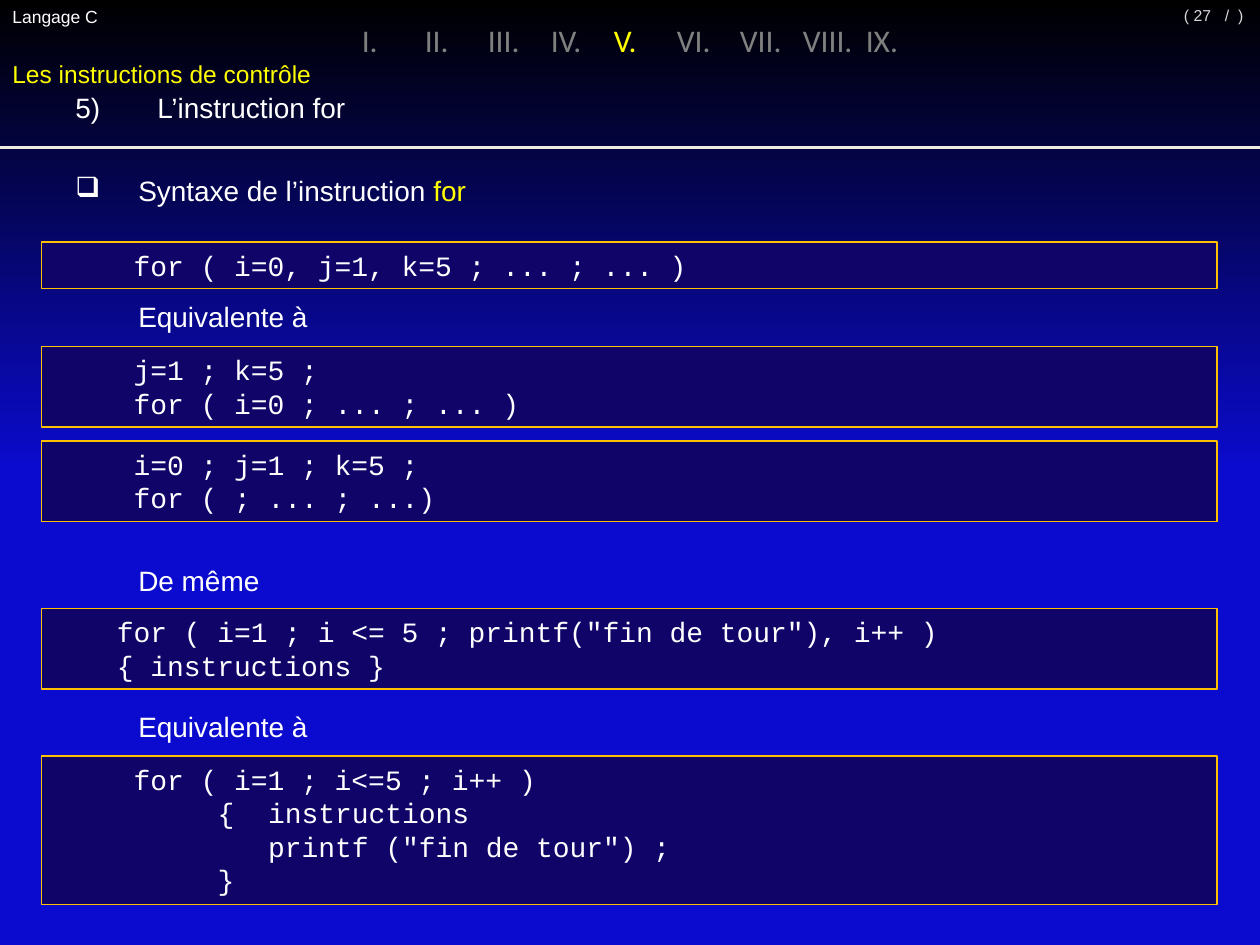
from lxml import etree
from pptx import Presentation
from pptx.dml.color import RGBColor
from pptx.enum import shapes, text
from pptx.oxml import ns
from pptx.util import Inches, Pt

BLACK = RGBColor(0x00, 0x00, 0x00)
BLUE = RGBColor(0x0B, 0x0B, 0xCF)
NAVY = RGBColor(0x10, 0x04, 0x68)
GOLD = RGBColor(0xFF, 0xC0, 0x00)
YELLOW = RGBColor(0xFF, 0xFF, 0x00)
WHITE = RGBColor(0xFF, 0xFF, 0xFF)
IVORY = RGBColor(0xEE, 0xEC, 0xE1)
SILVER = RGBColor(0xD9, 0xD9, 0xD9)
GRAY = RGBColor(0x80, 0x80, 0x80)

LINE_HEIGHT = 0.27
COLUMN = 0.1333
CODE_MARGIN = 0.5
BRACE_COLUMNS = 3

CHAPTERS = ["I.", "II.", "III.", "IV.", "V.", "VI.", "VII.", "VIII.", "IX."]
CURRENT_CHAPTER = "V."
LABELS = [(2.33, "Equivalente à"), (4.42, "De même"), (5.58, "Equivalente à")]
CODE_BLOCKS = [
    (1.92, [(1, "for ( i=0, j=1, k=5 ; ... ; ... )")]),
    (2.75, [(1, "j=1 ; k=5 ;"), (1, "for ( i=0 ; ... ; ... )")]),
    (3.5, [(1, "i=0 ; j=1 ; k=5 ;"), (1, "for ( ; ... ; ...)")]),
    (4.83, [(0, 'for ( i=1 ; i <= 5 ; printf("fin de tour"), i++ )'),
            (0, "{ instructions }")]),
    (6, [(1, "for ( i=1 ; i<=5 ; i++ )"), (6, "{\tinstructions"),
         (9, 'printf ("fin de tour") ;'), (6, "}")]),
]


def set_indent(para, margin, first=0):
    """Set the left margin and first-line indent of a paragraph."""
    properties = para._p.get_or_add_pPr()
    properties.set("marL", str(Inches(margin)))
    properties.set("indent", str(Inches(first)))


def set_font(para, size, color, name="Arial"):
    """Set the font shared by all runs of a paragraph."""
    para.font.size = Pt(size)
    para.font.name = name
    para.font.color.rgb = color


def add_label(page, box, wording, size, color, name="Arial",
              anchor=text.MSO_ANCHOR.TOP):
    """Add a one-paragraph text box and return its paragraph."""
    frame = page.shapes.add_textbox(*map(Inches, box)).text_frame
    frame.word_wrap = True
    frame.vertical_anchor = anchor
    para = frame.paragraphs[0]
    para.text = wording
    set_font(para, size, color, name)
    return para


def add_background(page):
    """Fill the page from black down to blue at mid-height."""
    fill = page.background.fill
    fill.gradient()
    fill.gradient_angle = 270
    for stop, (position, color) in zip(fill.gradient_stops, [(0, BLACK), (0.5, BLUE)]):
        stop.position = position
        stop.color.rgb = color


def add_chapters(page, box):
    """Add the chapter numerals with the current one highlighted."""
    para = add_label(page, box, "", 18, GRAY, "Calibri")
    para.alignment = text.PP_ALIGN.CENTER
    for index, chapter in enumerate(CHAPTERS):
        span = para.add_run()
        span.text = f"\t{chapter}" if index else chapter
        if chapter == CURRENT_CHAPTER:
            span.font.color.rgb = YELLOW


def add_header(page, box):
    """Add the course name, page number, chapters, titles and rule."""
    left, top, width, height = box
    add_label(page, (left, top, 0.92, 0.27), "Langage C", 10, WHITE)
    page_parts = [(9.48, 0.63, "/  )", text.PP_ALIGN.CENTER),
                  (9.17, 0.54, "( 27", text.PP_ALIGN.RIGHT)]
    for offset, part_width, wording, alignment in page_parts:
        para = add_label(page, (left + offset, top - 0.08, part_width, 0.4),
                         wording, 9, SILVER, anchor=text.MSO_ANCHOR.MIDDLE)
        para.alignment = alignment
    add_chapters(page, (left, top + 0.12, width, 0.4))
    title = add_label(page, (left, top + 0.42, width, 0.34),
                      "Les instructions de contrôle", 14, YELLOW)
    subtitle = add_label(page, (left, top + 0.67, 5.08, 0.37),
                         "5)\t L’instruction for", 16, WHITE)
    set_indent(subtitle, 1.09, -0.59)
    for para in (title, subtitle):
        para.space_before = para.space_after = Pt(6)
    ends = (left, top + height, left + width, top + height)
    rule = page.shapes.add_connector(shapes.MSO_CONNECTOR.STRAIGHT, *map(Inches, ends))
    rule.line.color.rgb = IVORY
    rule.line.width = Pt(2)
    etree.SubElement(rule._element.spPr, ns.qn("a:effectLst"))


def add_topic(page, box):
    """Add the bulleted topic with its keyword highlighted."""
    para = add_label(page, box, "Syntaxe de l’instruction ", 16, WHITE)
    para.space_before = para.space_after = Pt(6)
    keyword = para.add_run()
    keyword.text = "for"
    keyword.font.color.rgb = YELLOW
    set_indent(para, 1, -0.5)
    properties = para._p.get_or_add_pPr()
    bullet = etree.Element(ns.qn("a:buChar"), char="❑")
    properties.find(ns.qn("a:defRPr")).addprevious(bullet)


def add_code(page, box, lines):
    """Add a framed code block, each line indented by its columns."""
    block = page.shapes.add_shape(shapes.MSO_SHAPE.RECTANGLE, *map(Inches, box))
    block.shadow.inherit = False
    block.fill.solid()
    block.fill.fore_color.rgb = NAVY
    block.line.color.rgb = GOLD
    block.line.width = Pt(0.75)
    frame = block.text_frame
    frame.word_wrap = True
    frame.vertical_anchor = text.MSO_ANCHOR.TOP
    frame.text = "\n".join(wording for _, wording in lines)
    for para, (columns, wording) in zip(frame.paragraphs, lines):
        hanging = BRACE_COLUMNS * COLUMN if "\t" in wording else 0
        set_indent(para, CODE_MARGIN + columns * COLUMN + hanging, -hanging)
        para.alignment = text.PP_ALIGN.LEFT
        set_font(para, 16, WHITE, "Courier New")


def add_body(page, left, width):
    """Add the topic, the labels and the code blocks."""
    add_topic(page, (left, 1.33, width, 0.37))
    for top, wording in LABELS:
        set_indent(add_label(page, (left, top, width, 0.37), wording, 16, WHITE), 1)
    for top, lines in CODE_BLOCKS:
        height = 0.1 + LINE_HEIGHT * len(lines)
        add_code(page, (left + 0.33, top, width - 0.67, height), lines)


def main():
    """Build the deck and save it."""
    deck = Presentation()
    deck.slide_width, deck.slide_height = Inches(10), Inches(7.5)
    page = deck.slides.add_slide(deck.slide_layouts[6])
    add_background(page)
    add_header(page, (0, 0, 10, 1.17))
    add_body(page, 0, 10)
    deck.save("out.pptx")


if __name__ == "__main__":
    main()
